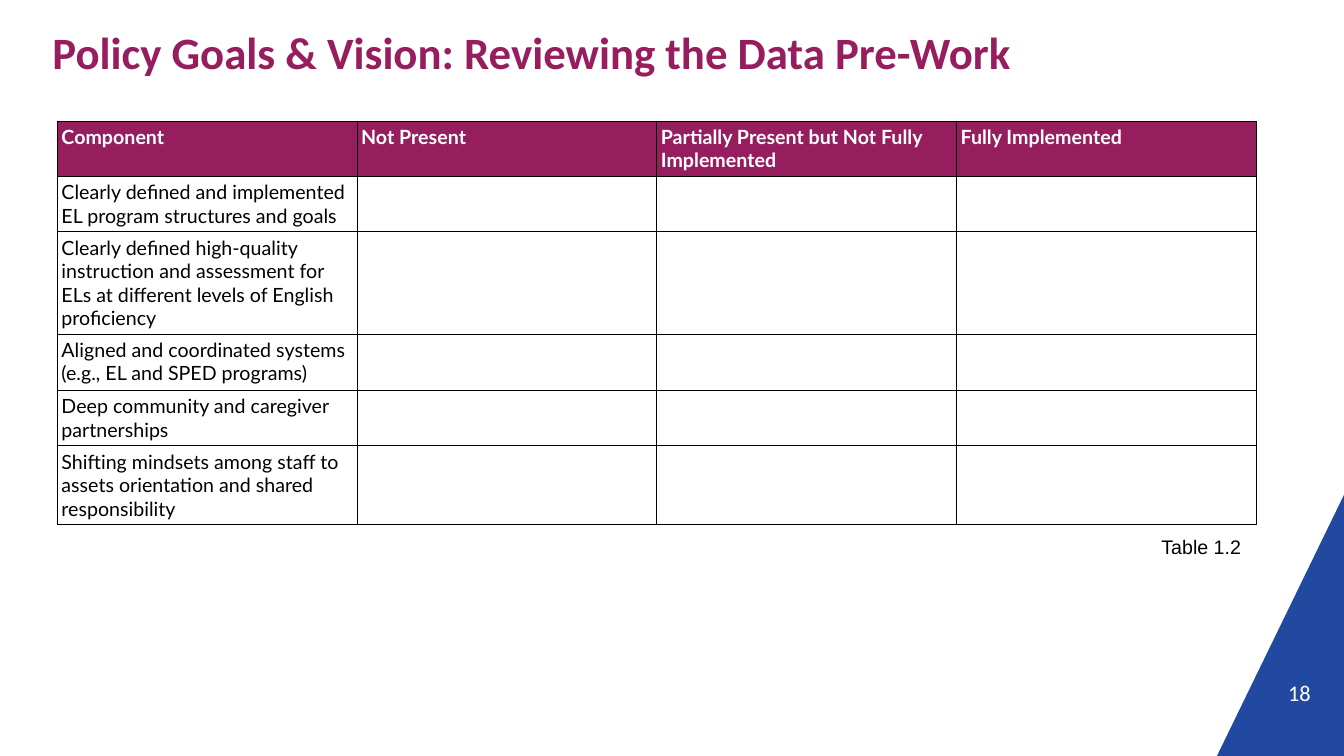
from lxml.etree import SubElement
from pptx import Presentation
from pptx.dml.color import RGBColor
from pptx.enum.text import MSO_ANCHOR, PP_ALIGN
from pptx.oxml.ns import qn
from pptx.util import Inches, Pt

PLUM = RGBColor(0x97, 0x1E, 0x5E)
BLUE = RGBColor(0x20, 0x49, 0x9F)
WHITE = RGBColor(0xFF, 0xFF, 0xFF)
BLACK = RGBColor(0x00, 0x00, 0x00)

WIDTH, HEIGHT = 13.33, 7.5
HEADINGS = [
    "Component",
    "Not Present",
    "Partially Present but Not Fully Implemented",
    "Fully Implemented",
]
COMPONENTS = [
    "Clearly defined and implemented EL program structures and goals",
    "Clearly defined high-quality instruction and assessment for ELs at "
    "different levels of English proficiency",
    "Aligned and coordinated systems (e.g., EL and SPED programs)",
    "Deep community and caregiver partnerships",
    "Shifting mindsets among staff to assets orientation and shared responsibility",
]
ROW_HEIGHTS = [0.55, 0.55, 1.01, 0.56, 0.55, 0.78]


def style_text(frame, text, font_name, size, color, bold=False, align=PP_ALIGN.LEFT):
    frame.text = text
    para = frame.paragraphs[0]
    para.alignment = align
    for span in para.runs:
        span.font.name = font_name
        span.font.size = Pt(size)
        span.font.bold = bold
        span.font.color.rgb = color


def place(shape, left, top, width, height):
    shape.left, shape.top = Inches(left), Inches(top)
    shape.width, shape.height = Inches(width), Inches(height)


def clear_margins(frame):
    frame.margin_left = frame.margin_right = 0
    frame.margin_top = frame.margin_bottom = 0


def add_corner(page):
    builder = page.shapes.build_freeform(Inches(WIDTH), Inches(4.91))
    builder.add_line_segments(
        [(Inches(12.07), Inches(HEIGHT)), (Inches(WIDTH), Inches(HEIGHT))], close=True
    )
    corner = builder.convert_to_shape()
    corner.shadow.inherit = False
    corner.fill.solid()
    corner.fill.fore_color.rgb = BLUE
    corner.line.fill.background()


def add_title(page, text):
    title = page.shapes.title
    place(title, 0.52, 0.24, 11.98, 0.54)
    frame = title.text_frame
    clear_margins(frame)
    frame.vertical_anchor = MSO_ANCHOR.MIDDLE
    style_text(frame, text, "Calibri", 32, PLUM, bold=True)


def add_label(page, left, top, width, height):
    box = page.shapes.add_textbox(
        Inches(left), Inches(top), Inches(width), Inches(height)
    )
    box.text_frame.word_wrap = True
    return box.text_frame


def add_borders(cell):
    properties = cell._tc.get_or_add_tcPr()
    for side in ("lnL", "lnR", "lnT", "lnB"):
        line = SubElement(properties, qn(f"a:{side}"), w=str(Pt(0.75)))
        fill = SubElement(line, qn("a:solidFill"))
        SubElement(fill, qn("a:srgbClr"), val=str(BLACK))


def fill_cell(cell, text, is_heading):
    cell.margin_left = cell.margin_right = Inches(0.04)
    cell.margin_top = cell.margin_bottom = Inches(0.04)
    add_borders(cell)
    if is_heading:
        cell.fill.solid()
        cell.fill.fore_color.rgb = PLUM
    else:
        cell.fill.background()
    if text:
        color = WHITE if is_heading else BLACK
        style_text(cell.text_frame, text, "Lato", 14, color, bold=is_heading)


def add_review_table(page):
    rows = [HEADINGS] + [[component, "", "", ""] for component in COMPONENTS]
    table = page.shapes.add_table(
        len(rows), len(HEADINGS),
        Inches(0.57), Inches(1.2), Inches(11.89), Inches(sum(ROW_HEIGHTS)),
    ).table
    table.horz_banding = False
    for row, height in zip(table.rows, ROW_HEIGHTS):
        row.height = Inches(height)
    for row_index, texts in enumerate(rows):
        for column_index, text in enumerate(texts):
            fill_cell(table.cell(row_index, column_index), text, row_index == 0)


def main():
    deck = Presentation()
    deck.slide_width, deck.slide_height = Inches(WIDTH), Inches(HEIGHT)
    page = deck.slides.add_slide(deck.slide_layouts[5])
    add_corner(page)
    add_title(page, "Policy Goals & Vision: Reviewing the Data Pre-Work")
    number = add_label(page, 12.01, 6.7, 0.99, 0.3)
    clear_margins(number)
    number.vertical_anchor = MSO_ANCHOR.BOTTOM
    style_text(number, "18", "Calibri", 16, WHITE, align=PP_ALIGN.RIGHT)
    add_review_table(page)
    caption = add_label(page, 11.42, 5.26, 1.39, 0.34)
    style_text(caption, "Table 1.2", "Arial", 14, BLACK)
    deck.save("out.pptx")


if __name__ == "__main__":
    main()
